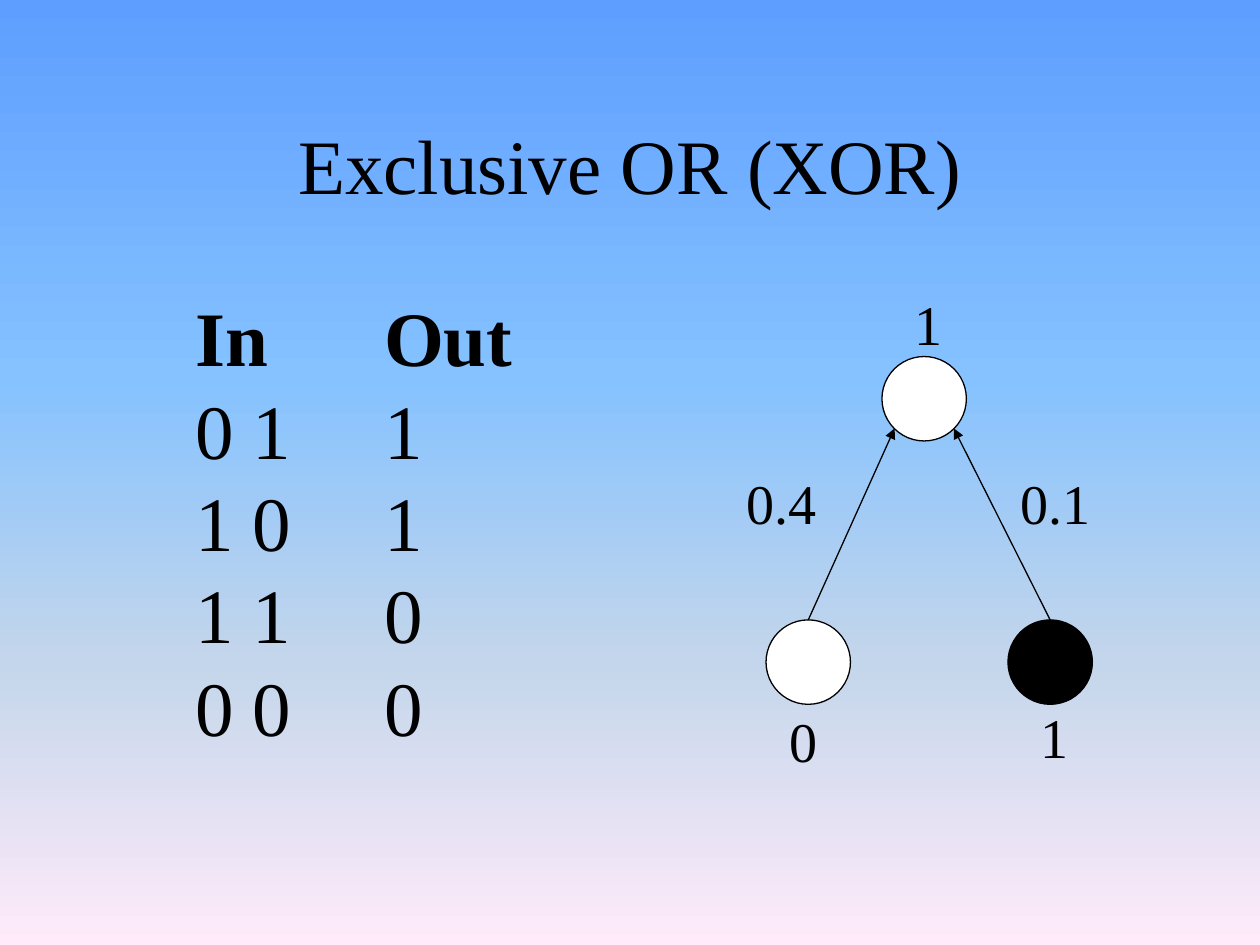
from copy import deepcopy

from lxml import etree
from pptx import Presentation
from pptx.dml.color import RGBColor
from pptx.enum.shapes import MSO_CONNECTOR, MSO_SHAPE
from pptx.enum.text import MSO_ANCHOR, MSO_AUTO_SIZE, PP_ALIGN
from pptx.oxml.ns import qn
from pptx.util import Inches, Pt

STRAIGHT = MSO_CONNECTOR.STRAIGHT
OVAL = MSO_SHAPE.OVAL
MIDDLE = MSO_ANCHOR.MIDDLE
FIT_SHAPE = MSO_AUTO_SIZE.SHAPE_TO_FIT_TEXT
FIXED_SIZE = MSO_AUTO_SIZE.NONE
CENTER = PP_ALIGN.CENTER

FONT = "Times New Roman"
BLACK = "000000"
WHITE = "FFFFFF"
SKY = [(0, "5E9EFF"), (40, "85C2FF"), (70, "C4D6EB"), (100, "FFEBFA")]
TRUTH_ROWS = ["In\t\tOut", "0 1\t \t1", "1 0\t \t1", "1 1\t \t0", "0 0\t \t0"]
NODE_SIZE = 0.67
NODE_INSET = 0.1


def color(value):
    return RGBColor.from_string(value)


def paint_background(page):
    fill = page.background.fill
    fill.gradient()
    fill.gradient_angle = 270
    stop_list = page.element.find(".//" + qn("a:gsLst"))
    for _ in range(len(SKY) - len(stop_list)):
        stop_list.append(deepcopy(stop_list[0]))
    for stop, (position, value) in zip(fill.gradient_stops, SKY):
        stop.position = position / 100
        stop.color.rgb = color(value)


def add_text(page, left, top, width, height, lines, size):
    box = page.shapes.add_textbox(
        Inches(left), Inches(top), Inches(width), Inches(height))
    frame = box.text_frame
    frame.text = "\n".join(lines)
    frame.word_wrap = False
    frame.auto_size = FIT_SHAPE
    for para in frame.paragraphs:
        for span in para.runs:
            span.font.name = FONT
            span.font.size = Pt(size)
            span.font.color.rgb = color(BLACK)
    return frame


def add_title(page, left, top, width, height):
    frame = add_text(page, left, top, width, height, ["Exclusive OR (XOR)"], 44)
    frame.auto_size = FIXED_SIZE
    frame.word_wrap = True
    frame.vertical_anchor = MIDDLE
    frame.paragraphs[0].alignment = CENTER


def add_truth_list(page, left, top, width, height):
    frame = add_text(page, left, top, width, height, TRUTH_ROWS, 44)
    frame.paragraphs[0].runs[0].font.bold = True


def add_node(page, left, top, fill):
    node = page.shapes.add_shape(
        OVAL, Inches(left), Inches(top), Inches(NODE_SIZE), Inches(NODE_SIZE))
    node.shadow.inherit = False
    node.fill.solid()
    node.fill.fore_color.rgb = color(fill)
    node.line.color.rgb = color(BLACK)
    node.line.width = Pt(0.75)
    return node


def add_arrow(page, source, target, across):
    arrow = page.shapes.add_connector(
        STRAIGHT, source.left + source.width // 2, source.top,
        target.left + Inches(across),
        target.top + Inches(NODE_SIZE - NODE_INSET))
    arrow.begin_connect(source, 0)
    arrow.line.color.rgb = color(BLACK)
    arrow.line.width = Pt(0.75)
    properties = arrow.element.find(qn("p:spPr"))
    outline = properties.find(qn("a:ln"))
    etree.SubElement(outline, qn("a:tailEnd"), type="triangle")
    etree.SubElement(properties, qn("a:effectLst"))


def add_network(page, left, top):
    first = add_node(page, left + 0.25, top + 2.67, WHITE)
    second = add_node(page, left + 2.17, top + 2.67, BLACK)
    output = add_node(page, left + 1.17, top + 0.58, WHITE)
    add_arrow(page, first, output, NODE_INSET)
    add_arrow(page, second, output, NODE_SIZE - NODE_INSET)
    labels = [
        ("0", 0.34, 3.31, 0.42),
        ("1", 2.33, 3.28, 0.42),
        ("1", 1.33, 0, 0.42),
        ("0.1", 2.17, 1.42, 0.76),
        ("0.4", 0, 1.42, 0.76),
    ]
    for text, across, down, width in labels:
        add_text(page, left + across, top + down, width, 0.63, [text], 32)


def main():
    deck = Presentation()
    deck.slide_width = Inches(10)
    deck.slide_height = Inches(7.5)
    page = deck.slides.add_slide(deck.slide_layouts[6])
    paint_background(page)
    add_title(page, 0.75, 0.67, 8.5, 1.25)
    add_network(page, 5.83, 2.25)
    add_truth_list(page, 1.45, 2.25, 3.22, 3.76)
    deck.save("out.pptx")


if __name__ == "__main__":
    main()
